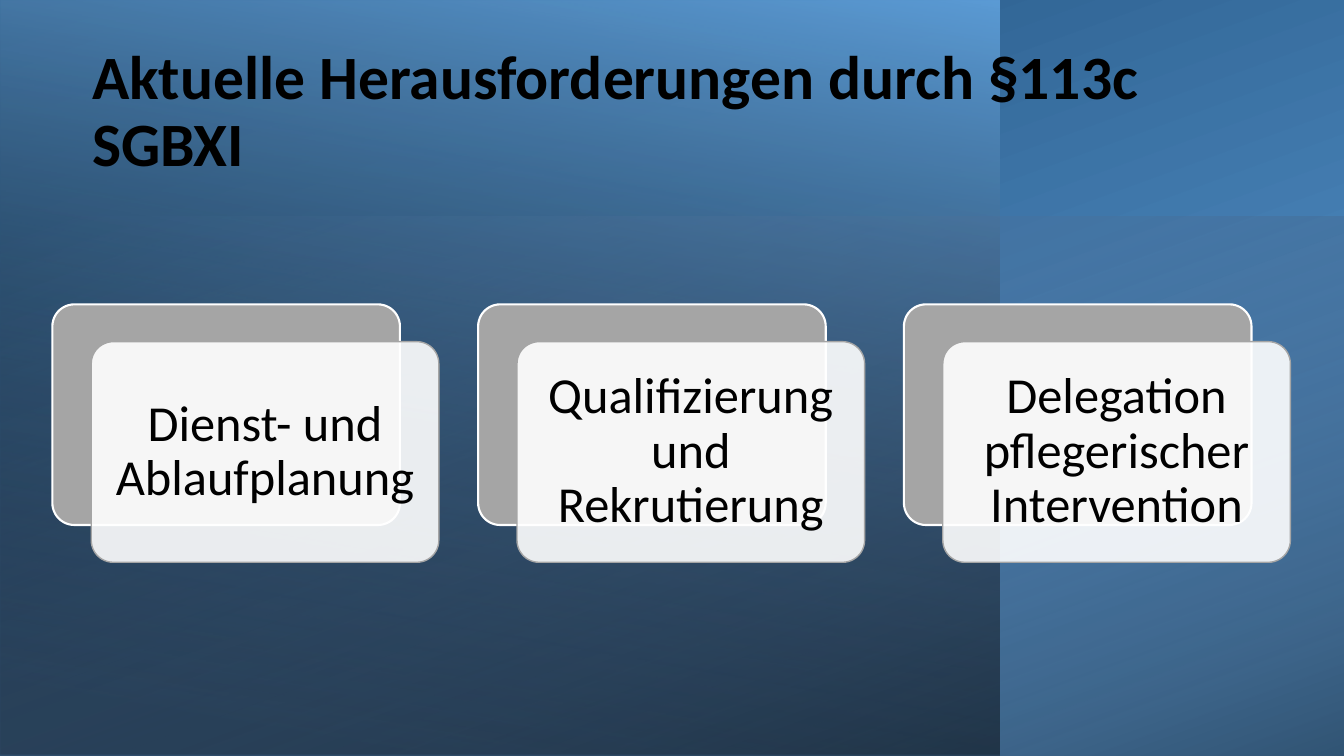
from lxml import etree
from pptx import Presentation
from pptx.dml.color import RGBColor
from pptx.enum.shapes import MSO_SHAPE
from pptx.enum.text import MSO_ANCHOR, MSO_AUTO_SIZE, PP_ALIGN
from pptx.oxml.ns import qn
from pptx.util import Cm, Pt

RECT, ROUNDED = MSO_SHAPE.RECTANGLE, MSO_SHAPE.ROUNDED_RECTANGLE
LEFT, CENTER = PP_ALIGN.LEFT, PP_ALIGN.CENTER
MIDDLE, NO_FIT = MSO_ANCHOR.MIDDLE, MSO_AUTO_SIZE.NONE

# Content
TITLE = "Aktuelle Herausforderungen durch §113c SGBXI"
CHALLENGES = [
    "Dienst- und Ablaufplanung",
    "Qualifizierung und Rekrutierung",
    "Delegation pflegerischer Intervention",
]

COLORS = {
    "text": "000000", "shade": "000000", "sky": "5B9BD5", "navy": "1F4E79",
    "mist": "8FAADC", "gray": "A5A5A5", "white": "FFFFFF",
}
FONT = "Calibri"
SLIDE_W, SLIDE_H = 33.87, 19.05

# Background panels: visible box in cm, rotation, gradient angle,
# stops as (position %, colour, opacity %)
PANELS = [
    ((0, 0, SLIDE_W, SLIDE_H), 270, 200, [(8, "sky", 100), (100, "navy", 100)]),
    ((0, 0, 25.2, SLIDE_H), 180, 80, [(8, "shade", 52), (100, "sky", 100)]),
    ((0, 5.46, SLIDE_W, 13.59), 270, 20, [(0, "mist", 0), (100, "shade", 46)]),
]

# Cards, in cm
CARD_W, CARD_H = 8.76, 5.56
CARD_X, CARD_Y, CARD_PITCH = 1.32, 7.67, 10.73
FRONT_DX, FRONT_DY = 0.98, 0.94
CARD_INSET = 0.37


def rgb(name):
    return RGBColor.from_string(COLORS[name])


def set_opacity(color_element, percent):
    if percent < 100:
        alpha = etree.SubElement(color_element, qn("a:alpha"))
        alpha.set("val", str(percent * 1000))


def add_panel(slide, box, rotation, angle, stops):
    x, y, w, h = box
    if rotation == 270:  # a quarter turn swaps width and height about the centre
        x, y, w, h = x + (w - h) / 2, y + (h - w) / 2, h, w
    sp = slide.shapes.add_shape(RECT, Cm(x), Cm(y), Cm(w), Cm(h))
    sp.shadow.inherit = False
    sp.rotation = rotation
    sp._element.spPr.find(qn("a:xfrm")).set("flipH", "1")
    sp.line.fill.background()
    sp.fill.gradient()
    sp.fill.gradient_angle = 360 - angle
    for stop, (position, color, _) in zip(sp.fill.gradient_stops, stops):
        stop.position = position / 100
        stop.color.rgb = rgb(color)
    for clr, (_, _, opacity) in zip(sp._element.spPr.iter(qn("a:srgbClr")), stops):
        set_opacity(clr, opacity)


def add_card(slide, x, y, fill, line, line_width, opacity=100):
    sp = slide.shapes.add_shape(ROUNDED, Cm(x), Cm(y), Cm(CARD_W), Cm(CARD_H))
    sp.shadow.inherit = False
    sp.adjustments[0] = 0.1
    sp.fill.solid()
    sp.fill.fore_color.rgb = rgb(fill)
    set_opacity(next(sp._element.spPr.iter(qn("a:srgbClr"))), opacity)
    sp.line.color.rgb = rgb(line)
    sp.line.width = Pt(line_width)
    return sp


def write(sp, text, size, align, inset, bold=False):
    tf = sp.text_frame
    tf.word_wrap = True
    tf.auto_size = NO_FIT
    tf.vertical_anchor = MIDDLE
    tf.margin_left = tf.margin_right = tf.margin_top = tf.margin_bottom = Cm(inset)
    p = tf.paragraphs[0]
    p.alignment = align
    p.line_spacing = 0.9
    r = p.add_run()
    r.text = text
    r.font.name, r.font.size, r.font.bold = FONT, Pt(size), bold
    r.font.color.rgb = rgb("text")


def main():
    prs = Presentation()
    prs.slide_width, prs.slide_height = Cm(SLIDE_W), Cm(SLIDE_H)
    slide = prs.slides.add_slide(prs.slide_layouts[5])

    # Background
    for panel in PANELS:
        add_panel(slide, *panel)

    # Title, brought in front of the panels
    title = slide.shapes.title
    title.left, title.top, title.width, title.height = Cm(2.33), Cm(1.01), Cm(29.21), Cm(3.68)
    write(title, TITLE, 44, LEFT, 0, bold=True)
    slide.shapes._spTree.append(title._element)

    # Challenge cards: gray back plate with a translucent front plate
    for i, challenge in enumerate(CHALLENGES):
        x = CARD_X + i * CARD_PITCH
        add_card(slide, x, CARD_Y, "gray", "white", 1.5)
        front = add_card(slide, x + FRONT_DX, CARD_Y + FRONT_DY, "white", "gray", 1, opacity=90)
        write(front, challenge, 36, CENTER, CARD_INSET)

    prs.save("out.pptx")


if __name__ == "__main__":
    main()
